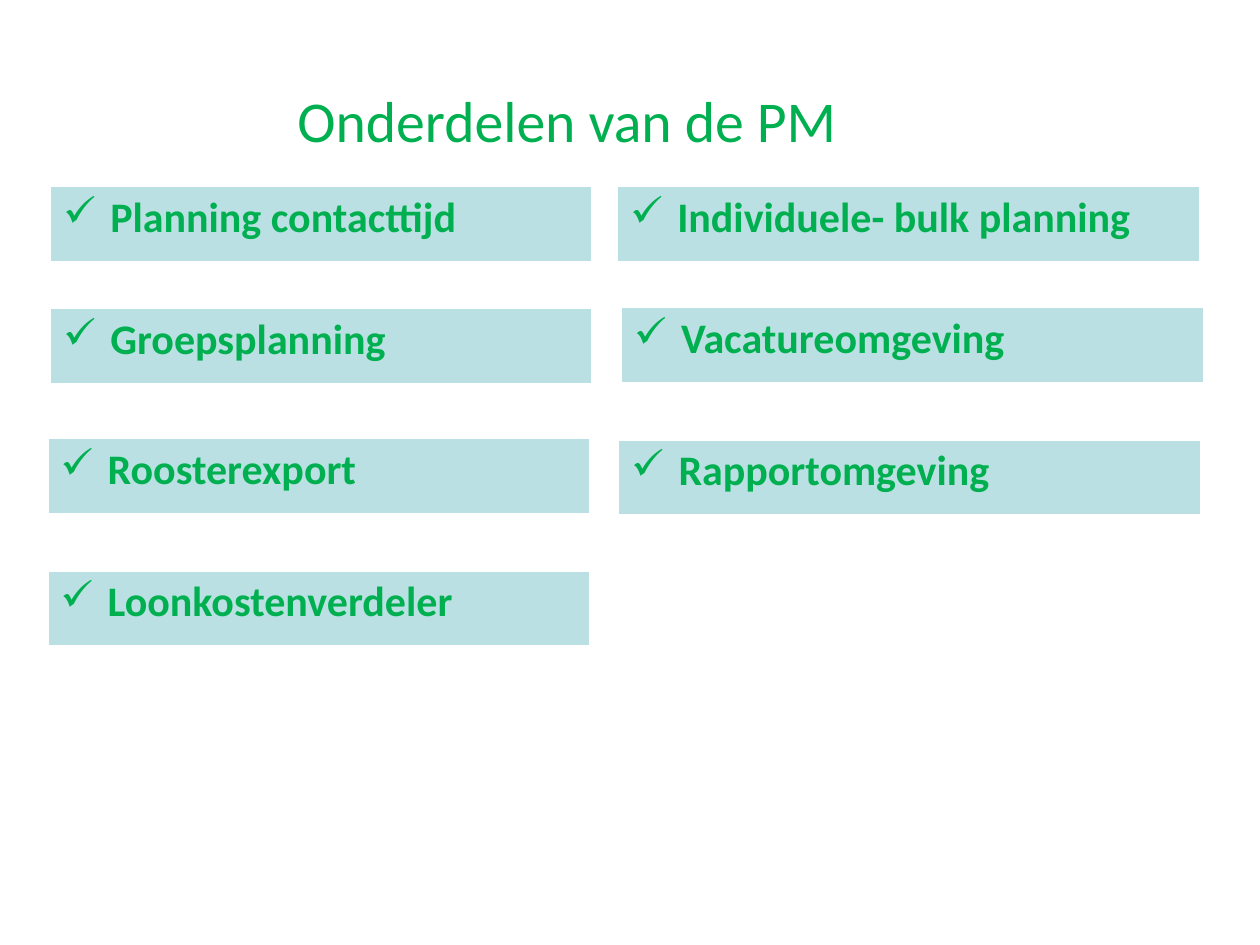
import pptx
import pptx.dml.color
import pptx.enum.text
import pptx.oxml
import pptx.oxml.ns
import pptx.util
from lxml import etree

Pt = pptx.util.Pt
GREEN = pptx.dml.color.RGBColor(0x00, 0xB0, 0x50)
PALE_TEAL = pptx.dml.color.RGBColor(0xBB, 0xE0, 0xE3)
WHITE = pptx.dml.color.RGBColor(0xFF, 0xFF, 0xFF)

LEFT_WIDTH, RIGHT_WIDTH, ROW_HEIGHT = 309.6, 332.64, 43.92

# Label, left, top, width
PARTS = [
    ("Planning contacttijd", 28.8, 106.56, LEFT_WIDTH),
    ("Individuele- bulk planning", 352.8, 106.56, RIGHT_WIDTH),
    ("Groepsplanning", 28.8, 176.4, LEFT_WIDTH),
    ("Vacatureomgeving", 354.96, 175.68, RIGHT_WIDTH),
    ("Roosterexport", 27.36, 250.56, LEFT_WIDTH),
    ("Rapportomgeving", 353.52, 251.28, RIGHT_WIDTH),
    ("Loonkostenverdeler", 27.36, 326.16, LEFT_WIDTH),
]


class PageBuilder:
    """Holds the text style and the current page."""

    font_name = "Calibri"
    indent = 27
    borders = {"lnL": 1, "lnR": 1, "lnT": 1, "lnB": 3}

    def __init__(self, page):
        self.page = page

    def style(self, para, size, bold):
        para.font.name = self.font_name
        para.font.size = Pt(size)
        para.font.bold = bold
        para.font.color.rgb = GREEN

    def title(self, text, left, top, width, height):
        box = self.page.shapes.add_textbox(Pt(left), Pt(top), Pt(width), Pt(height))
        frame = box.text_frame
        frame.word_wrap = True
        frame.vertical_anchor = pptx.enum.text.MSO_ANCHOR.MIDDLE
        para = frame.paragraphs[0]
        para.text = text
        para.alignment = pptx.enum.text.PP_ALIGN.CENTER
        self.style(para, 33, False)

    def check_bullet(self, para):
        properties = para._p.get_or_add_pPr()
        properties.set("marL", str(Pt(self.indent)))
        properties.set("indent", str(-Pt(self.indent)))
        bullet = etree.SubElement(properties, pptx.oxml.ns.qn("a:buChar"))
        bullet.set("char", "✓")

    def border(self, cell):
        properties = cell._tc.get_or_add_tcPr()
        for side, width in self.borders.items():
            properties.append(pptx.oxml.parse_xml(
                f'<a:{side} {pptx.oxml.ns.nsdecls("a")} w="{Pt(width)}">'
                f'<a:solidFill><a:srgbClr val="{WHITE}"/></a:solidFill></a:{side}>'))

    def check_table(self, text, left, top, width):
        table = self.page.shapes.add_table(
            1, 1, Pt(left), Pt(top), Pt(width), Pt(ROW_HEIGHT)).table
        table.first_row = False
        table.horz_banding = False
        cell = table.cell(0, 0)
        self.border(cell)
        cell.fill.solid()
        cell.fill.fore_color.rgb = PALE_TEAL
        para = cell.text_frame.paragraphs[0]
        para.text = text
        self.check_bullet(para)
        self.style(para, 24, True)


def main():
    deck = pptx.Presentation()
    deck.slide_width, deck.slide_height = Pt(720), Pt(540)
    builder = PageBuilder(deck.slides.add_slide(deck.slide_layouts[6]))

    # Heading
    builder.title("Onderdelen van de PM", 0, 23.04, 648, 90)

    # One checked table per part
    for part in PARTS:
        builder.check_table(*part)

    deck.save("out.pptx")


if __name__ == "__main__":
    main()
